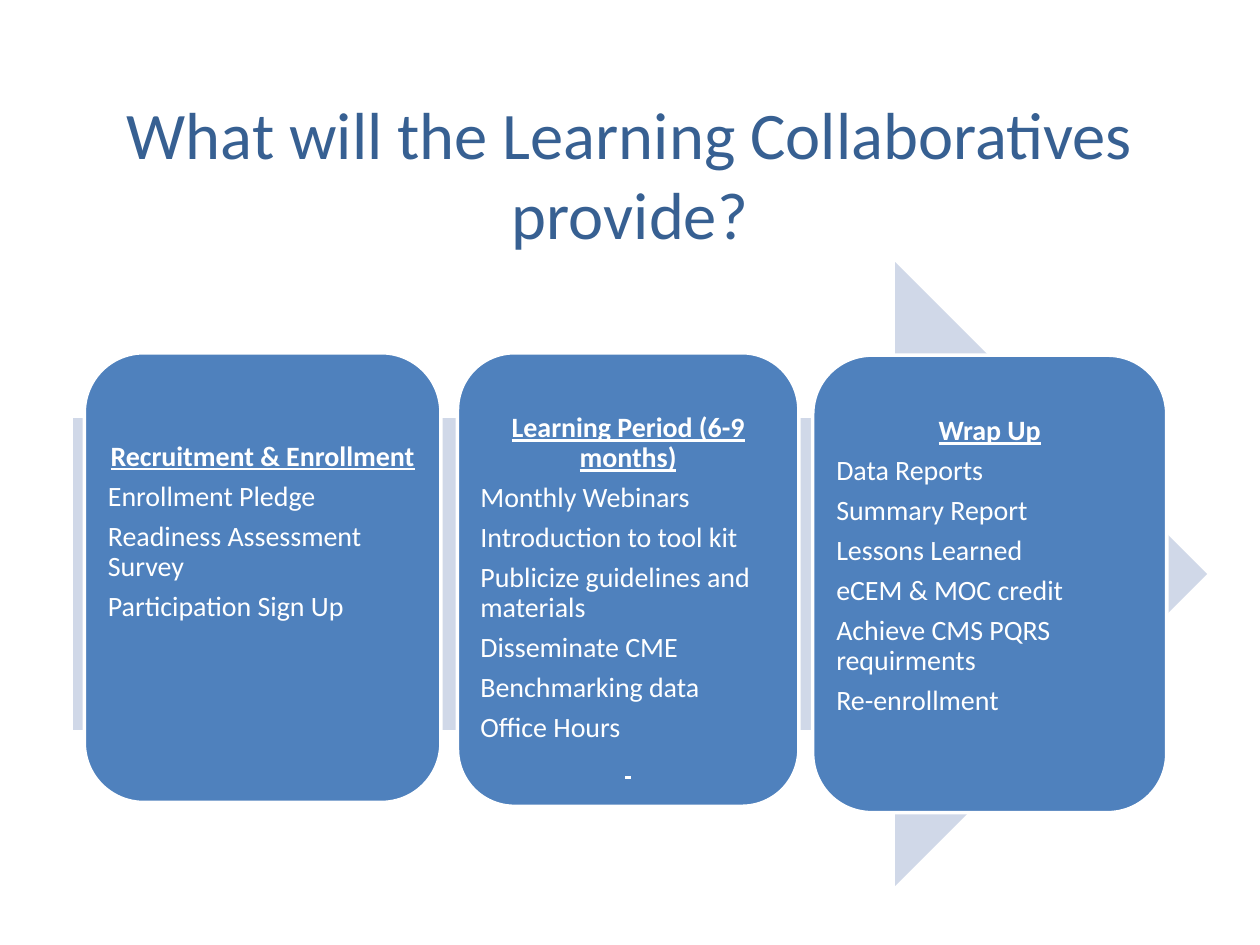
from pptx import Presentation
from pptx.dml.color import RGBColor
from pptx.enum.shapes import MSO_SHAPE
from pptx.enum.text import MSO_ANCHOR, PP_ALIGN
from pptx.util import Pt

HEADLINE = "What will the Learning Collaboratives provide?"
PHASES = [
    {
        "heading": "Recruitment & Enrollment",
        "items": ["Enrollment Pledge", "Readiness Assessment Survey",
                  "Participation Sign Up"],
        "box": (48.2, 201.6, 203.8, 257),
        "top_margin": 41,
    },
    {
        "heading": "Learning Period (6-9 months)",
        "items": ["Monthly Webinars", "Introduction to tool kit",
                  "Publicize guidelines and materials", "Disseminate CME",
                  "Benchmarking data", "Office Hours"],
        "closing": " ",
        "box": (261.4, 201.6, 195.1, 259.2),
        "top_margin": 25,
    },
    {
        "heading": "Wrap Up",
        "items": ["Data Reports", "Summary Report", "Lessons Learned",
                  "eCEM & MOC credit", "Achieve CMS PQRS requirments",
                  "Re-enrollment"],
        "box": (464.4, 203, 202.3, 261.4),
        "top_margin": 25,
    },
]


def paint(target, color):
    target.solid()
    target.fore_color.rgb = RGBColor.from_string(color)


def set_font(paragraph, size, color, emphasis=False):
    font = paragraph.font
    font.name = "Calibri"
    font.size = Pt(size)
    font.bold = emphasis
    font.underline = emphasis
    paint(font.fill, color)


def add_panel(slide, kind, box, color):
    panel = slide.shapes.add_shape(kind, *map(Pt, box))
    panel.shadow.inherit = False
    paint(panel.fill, color)
    return panel


def add_phase(slide, phase):
    card = add_panel(slide, MSO_SHAPE.ROUNDED_RECTANGLE, phase["box"], "4F81BD")
    paint(card.line.fill, "FFFFFF")
    card.line.width = Pt(2)
    frame = card.text_frame
    frame.word_wrap = True
    frame.vertical_anchor = MSO_ANCHOR.TOP
    frame.margin_left = frame.margin_right = frame.margin_bottom = Pt(3.6)
    frame.margin_top = Pt(phase["top_margin"])

    lines = [(phase["heading"], 16, True)]
    lines += [(item, 16, False) for item in phase["items"]]
    if "closing" in phase:
        lines.append((phase["closing"], 14, True))
    for index, (words, size, emphasis) in enumerate(lines):
        paragraph = frame.add_paragraph() if index else frame.paragraphs[0]
        paragraph.text = words
        paragraph.alignment = PP_ALIGN.CENTER if emphasis else PP_ALIGN.LEFT
        paragraph.line_spacing = 0.9
        paragraph.space_after = Pt(5.6)
        set_font(paragraph, size, "FFFFFF", emphasis)


def main():
    deck = Presentation()
    deck.slide_width, deck.slide_height = Pt(720), Pt(540)
    slide = deck.slides.add_slide(deck.slide_layouts[5])

    title = slide.shapes.title
    title.left, title.top, title.width, title.height = map(Pt, (36, 54, 648, 90))
    title.text_frame.text = HEADLINE
    title.text_frame.vertical_anchor = MSO_ANCHOR.MIDDLE
    headline = title.text_frame.paragraphs[0]
    headline.alignment = PP_ALIGN.CENTER
    set_font(headline, 38, "376092")

    arrow = add_panel(slide, MSO_SHAPE.RIGHT_ARROW, (41.8, 149.8, 648, 356.4), "D0D8E8")
    arrow.line.fill.background()
    for phase in PHASES:
        add_phase(slide, phase)
    deck.save("out.pptx")


if __name__ == "__main__":
    main()
